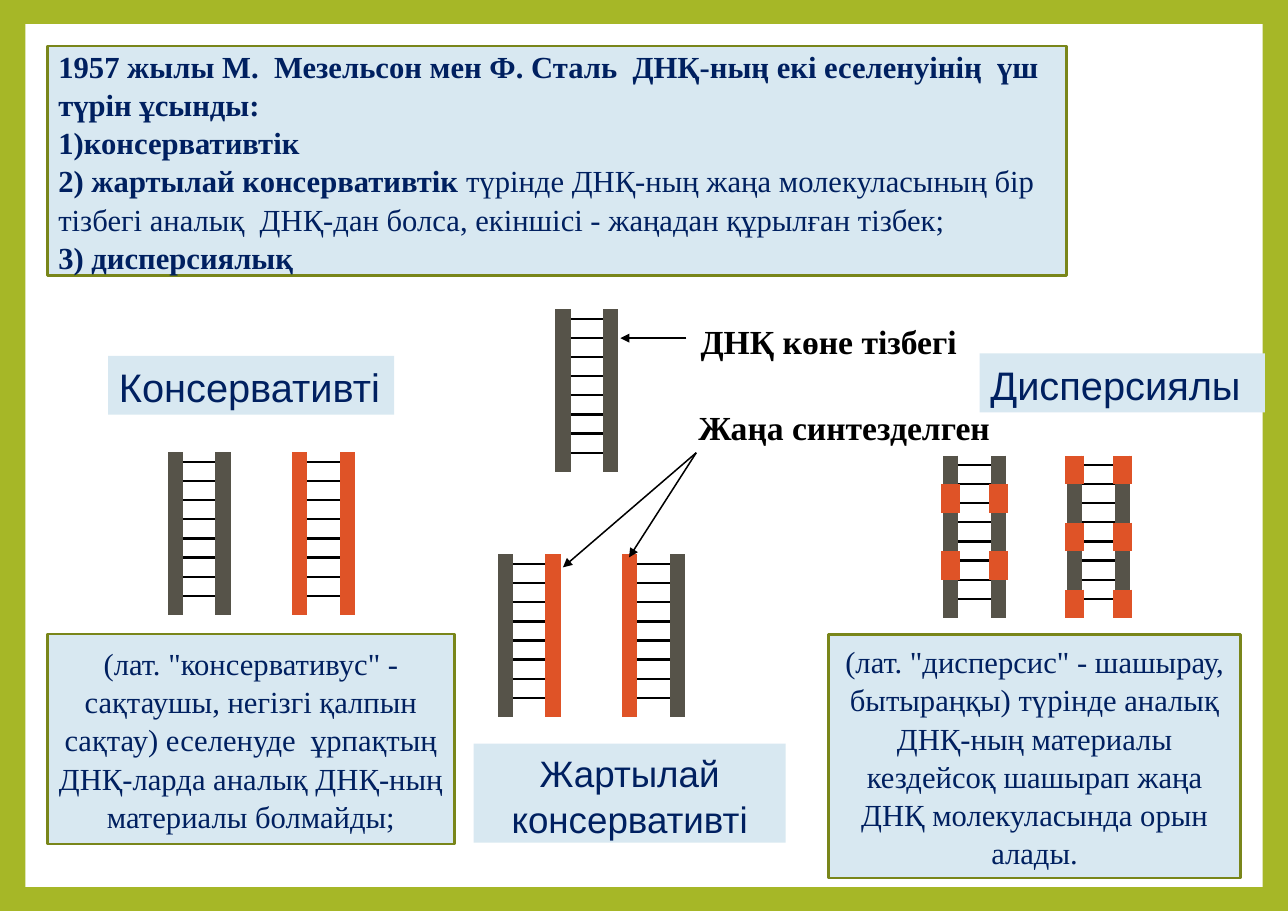
import dataclasses

import pptx
import pptx.dml.color
import pptx.enum.dml
import pptx.enum.shapes
import pptx.enum.text
import pptx.oxml
import pptx.util

Pt = pptx.util.Pt
ALIGN = pptx.enum.text.PP_ALIGN
ANCHOR = pptx.enum.text.MSO_ANCHOR

GREEN, WHITE, BLACK = "A6B727", "FFFFFF", "000000"
PALE, OLIVE, NAVY = "D8E8F1", "79861A", "002060"
OLD, NEW = "565349", "DF5327"
SERIF, SANS = "Times New Roman", "Arial"

WIDTH, HEIGHT = 31.2, 106.2
RUNGS, FIRST, STEP = 8, 6.2, 12.5
PATCH = 18.8
PITCH = 1.04


@dataclasses.dataclass
class Ladder:
    x: float
    y: float
    left: str = OLD
    right: str = OLD
    patches: tuple[float, ...] = ()


@dataclasses.dataclass
class Box:
    """Each paragraph is a pair: its bold part, then its plain part."""
    x: float
    y: float
    w: float
    h: float
    paras: list[tuple[str, str]]
    size: float
    font: str = SANS
    color: str = NAVY
    fill: str | None = PALE
    edge: str | None = None
    align: ALIGN = ALIGN.LEFT


LADDERS = [
    Ladder(114.5, 295.7),
    Ladder(195.8, 295.7, NEW, NEW),
    Ladder(621.2, 297.7, patches=(18.7, 62.6)),
    Ladder(702.3, 297.7, patches=(0, 43.8, 87.6)),
    Ladder(330.3, 362.4, OLD, NEW),
    Ladder(411.4, 362.4, NEW, OLD),
    Ladder(367.9, 202.2),
]

ARROWS = [
    (448.6, 221, 405.4, 221),
    (455, 295.9, 411.1, 364.3),
    (455, 295.9, 367.9, 370.8),
]

LABELS = [
    Box(309.6, 486, 203.8, 64.8, [("", "Жартылай консервативті")], 24,
        align=ALIGN.CENTER),
    Box(70.6, 232.6, 187, 38.5, [("", "Консервативті")], 26),
    Box(640.1, 231, 186.5, 38.5, [("", "Дисперсиялы")], 26),
]

KEYS = [
    Box(456.5, 208.1, 171, 28.1, [("ДНҚ көне тізбегі", "")], 22, SERIF, BLACK, None),
    Box(455, 264.2, 263, 28.1, [("Жаңа синтезделген", "")], 22, SERIF, BLACK, None),
]

INTRO = Box(31, 30.2, 666, 149.8, [
    ("1957 жылы М.  Мезельсон мен Ф. Сталь  ДНҚ-ның екі еселенуінің  үш түрін ұсынды:", ""),
    ("консервативтік", ""),
    ("2) жартылай консервативтік", " түрінде ДНҚ-ның жаңа молекуласының бір"),
    ("", "тізбегі аналық  ДНҚ-дан болса, екіншісі - жаңадан құрылған тізбек;"),
    ("3) дисперсиялық", ""),
], 20, SERIF, edge=OLIVE)

NOTES = [
    Box(31, 414.2, 266, 137.5, [
        ("", "(лат. \"консервативус\" - сақтаушы, негізгі қалпын сақтау) еселенуде  "
             "ұрпақтың ДНҚ-ларда аналық ДНҚ-ның материалы болмайды;"),
    ], 20, SERIF, edge=OLIVE, align=ALIGN.CENTER),
    Box(541.5, 414.6, 269.3, 159.1, [
        ("", "(лат. \"дисперсис\" - шашырау, бытыраңқы) түрінде аналық ДНҚ-ның "
             "материалы кездейсоқ шашырап жаңа ДНҚ молекуласында орын алады."),
    ], 20, SERIF, edge=OLIVE, align=ALIGN.CENTER),
]


def rgb(code: str) -> pptx.dml.color.RGBColor:
    return pptx.dml.color.RGBColor.from_string(code)


def add_child(node, tag: str, **attrs: str) -> None:
    child = pptx.oxml.parse_xml(
        f'<a:{tag} xmlns:a="http://schemas.openxmlformats.org/drawingml/2006/main"/>')
    for name, value in attrs.items():
        child.set(name, value)
    node.append(child)


def add_line(slide, x1: float, y1: float, x2: float, y2: float,
             color: str, width: float, arrow: bool = False) -> None:
    line = slide.shapes.add_connector(
        pptx.enum.shapes.MSO_CONNECTOR.STRAIGHT, Pt(x1), Pt(y1), Pt(x2), Pt(y2))
    line.line.color.rgb = rgb(color)
    line.line.width = Pt(width)
    if arrow:
        add_child(line.line._get_or_add_ln(), "tailEnd", type="triangle")
    add_child(line._element.spPr, "effectLst")


def add_ladder(slide, item: Ladder) -> None:
    far = item.x + WIDTH
    for i in range(RUNGS):
        y = item.y + FIRST + i * STEP
        add_line(slide, item.x, y, far, y, BLACK, 1.5)
    for x, color in ((item.x, item.left), (far, item.right)):
        add_line(slide, x, item.y, x, item.y + HEIGHT, color, 10)
        for gap in item.patches:
            top = item.y + gap
            add_line(slide, x, top, x, top + PATCH, NEW, 12)


def add_rect(slide, x: float, y: float, w: float, h: float,
             fill: str, edge: str | None = None):
    rect = slide.shapes.add_shape(
        pptx.enum.shapes.MSO_SHAPE.RECTANGLE, Pt(x), Pt(y), Pt(w), Pt(h))
    rect.shadow.inherit = False
    rect.fill.solid()
    rect.fill.fore_color.rgb = rgb(fill)
    if edge:
        rect.line.color.rgb = rgb(edge)
        rect.line.width = Pt(1.5)
    else:
        rect.line.fill.background()
    return rect


def add_box(slide, box: Box):
    """Draw a filled box, or a bare text box with thin margins."""
    if box.fill:
        shape = add_rect(slide, box.x, box.y, box.w, box.h, box.fill, box.edge)
        frame = shape.text_frame
    else:
        shape = slide.shapes.add_textbox(Pt(box.x), Pt(box.y), Pt(box.w), Pt(box.h))
        frame = shape.text_frame
        frame.margin_left = frame.margin_right = Pt(1.4)
        frame.margin_top = frame.margin_bottom = Pt(0.7)
    frame.word_wrap = True
    frame.vertical_anchor = ANCHOR.MIDDLE if box.edge else ANCHOR.TOP
    frame.text = "\n".join(bold or plain for bold, plain in box.paras)
    for para, (bold, plain) in zip(frame.paragraphs, box.paras):
        para.alignment = box.align
        para.line_spacing = PITCH
        if bold and plain:
            para.add_run().text = plain
        for i, run in enumerate(para.runs):
            font = run.font
            font.name, font.size = box.font, Pt(box.size)
            font.bold = bool(bold) and i == 0
            font.color.rgb = rgb(box.color)
    return frame


def main() -> None:
    deck = pptx.Presentation()
    deck.slide_width, deck.slide_height = Pt(841.7), Pt(595.4)
    slide = deck.slides.add_slide(deck.slide_layouts[6])
    slide.background.fill.solid()
    slide.background.fill.fore_color.rgb = rgb(GREEN)
    add_rect(slide, 16.6, 15.8, 808.6, 563.8, WHITE)
    for box in LABELS:
        add_box(slide, box)
    for item in LADDERS:
        add_ladder(slide, item)
    for box in KEYS:
        add_box(slide, box)
    for ends in ARROWS:
        add_line(slide, *ends, BLACK, 1, arrow=True)
    intro = add_box(slide, INTRO)
    add_child(intro.paragraphs[1]._p.get_or_add_pPr(), "buAutoNum", type="arabicParenR")
    for box in NOTES:
        add_box(slide, box)
    deck.save("out.pptx")


if __name__ == "__main__":
    main()
